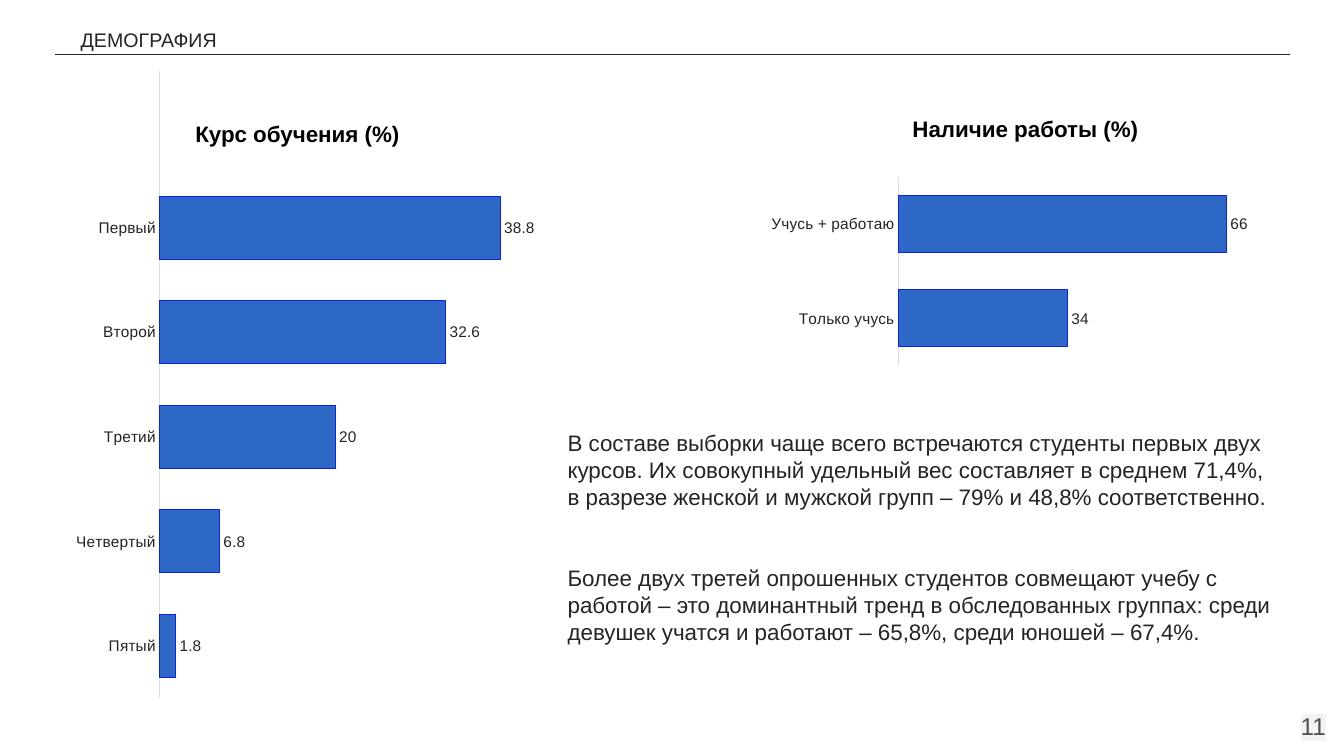
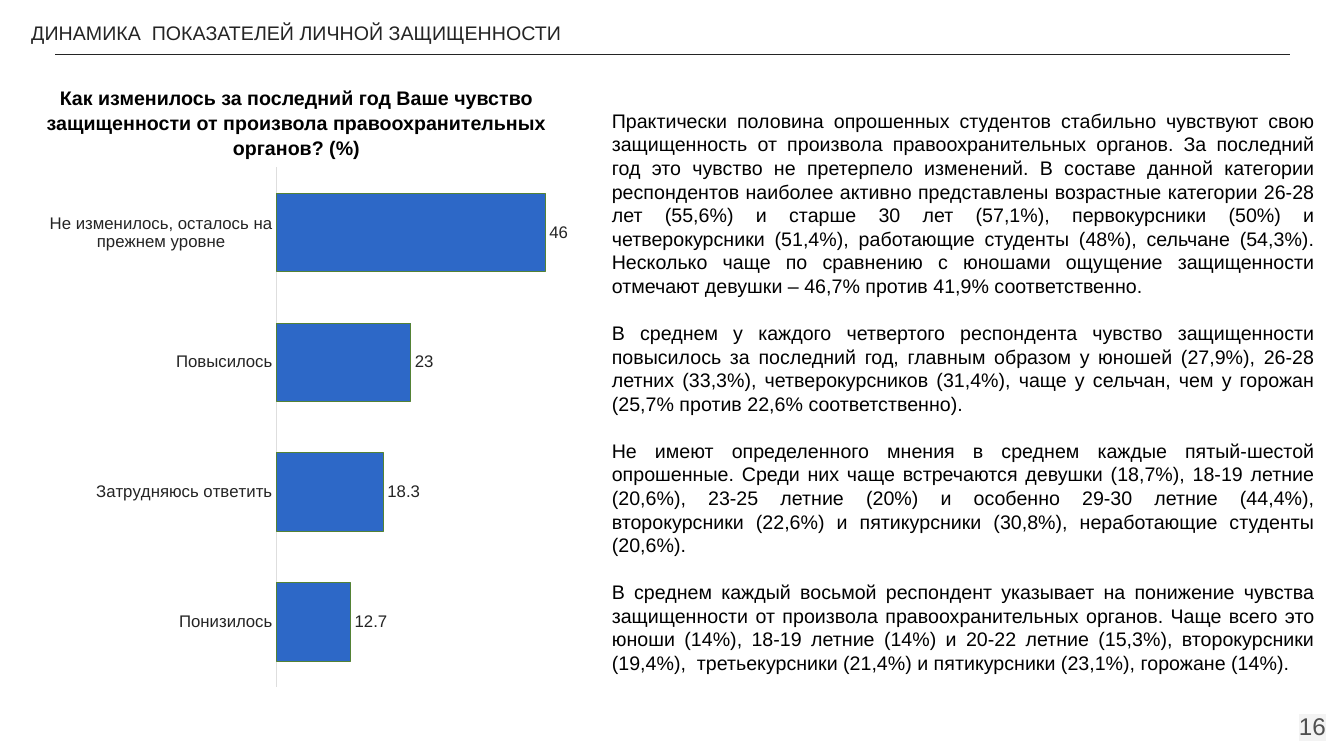
"""Build two survey slides with headings, bar charts and commentary."""
from dataclasses import dataclass
from typing import Any, Optional

from lxml.etree import SubElement
from pptx import Presentation
from pptx.chart.data import CategoryChartData
from pptx.dml.color import RGBColor
from pptx.enum.chart import XL_CHART_TYPE, XL_LABEL_POSITION, XL_TICK_MARK
from pptx.enum.shapes import MSO_CONNECTOR
from pptx.enum.text import MSO_ANCHOR, MSO_AUTO_SIZE, PP_ALIGN
from pptx.oxml import parse_xml
from pptx.oxml.ns import nsdecls, qn
from pptx.util import Inches, Pt

FONT = "Arial"
INK = RGBColor(0x24, 0x24, 0x24)
BLACK = RGBColor(0, 0, 0)
GREY = RGBColor(0x50, 0x50, 0x50)
AXIS = RGBColor(0xDE, 0xDE, 0xDE)
BAR = RGBColor(0x2D, 0x68, 0xC7)
BLUE_EDGE = RGBColor(0x0B, 0x20, 0xEA)
GREEN_EDGE = RGBColor(0x54, 0x82, 0x35)
HIGHLIGHT = "F3F3F3"


@dataclass(frozen=True)
class Area:
    """A rectangle in inches."""

    left: float
    top: float
    width: float
    height: float

    def lengths(self) -> list:
        """Return the four sides as slide lengths."""
        return [Inches(side) for side in (self.left, self.top, self.width, self.height)]


@dataclass(frozen=True)
class Passage:
    """A text box with one format for all its paragraphs."""

    area: Area
    lines: tuple[str, ...]
    size: float
    color: RGBColor = INK
    bold: bool = False
    align: PP_ALIGN = PP_ALIGN.LEFT
    anchor: MSO_ANCHOR = MSO_ANCHOR.TOP
    inset: float = 0.1
    pitch: Optional[float] = None
    gap: float = 0


@dataclass(frozen=True)
class Bars:
    """A horizontal bar chart and its plot area as fractions."""

    area: Area
    rows: tuple[tuple[str, Optional[float]], ...]
    plot: Area
    maximum: float
    size: float
    edge: RGBColor


@dataclass(frozen=True)
class Sheet:
    """The content of one slide."""

    number: str
    heading: Passage
    charts: tuple[Bars, ...]
    passages: tuple[Passage, ...]


def heading(text: str, left: float, top: float) -> Passage:
    """Describe a slide heading."""
    return Passage(Area(left, top, 7, 0.36), (text,), 14, anchor=MSO_ANCHOR.MIDDLE)


def caption(text: str, area: Area, size: float, pitch: Optional[float] = None) -> Passage:
    """Describe a chart caption."""
    return Passage(area, (text,), size, BLACK, True, PP_ALIGN.CENTER, MSO_ANCHOR.MIDDLE, pitch=pitch)


SHEETS = (
    Sheet(
        "11",
        heading("ДЕМОГРАФИЯ", 0.7, 0.21),
        (
            Bars(
                Area(7.08, 1.65, 5.39, 2.67),
                (("Только учусь", 34), ("Учусь + работаю", 66)),
                Area(0.34, 0.04, 0.64, 0.7), 70, 11, BLUE_EDGE,
            ),
            Bars(
                Area(0.35, 0.7, 5.15, 6.23),
                (("Пятый", 1.8), ("Четвертый", 6.8), ("Третий", 20),
                 ("Второй", 32.6), ("Первый", 38.8), (" ", None)),
                Area(0.24, 0, 0.76, 1), 45, 11, BLUE_EDGE,
            ),
        ),
        (
            caption("Курс обучения (%)", Area(1.08, 1.15, 3.74, 0.36), 16),
            caption("Наличие работы (%)", Area(8.3, 1.1, 3.74, 0.36), 16),
            Passage(
                Area(5.5, 4.13, 7.27, 2.67),
                (
                    "В составе выборки чаще всего встречаются студенты первых двух курсов. "
                    "Их совокупный удельный вес составляет в среднем 71,4%, в разрезе "
                    "женской и мужской групп – 79% и 48,8% соответственно.",
                    "Более двух третей опрошенных студентов совмещают учебу с работой – "
                    "это доминантный тренд в обследованных группах: среди девушек учатся "
                    "и работают – 65,8%, среди юношей – 67,4%.",
                ),
                16, inset=0.13, pitch=19.3, gap=38.4,
            ),
        ),
    ),
    Sheet(
        "16",
        heading("ДИНАМИКА  ПОКАЗАТЕЛЕЙ ЛИЧНОЙ ЗАЩИЩЕННОСТИ", 0.21, 0.14),
        (
            Bars(
                Area(0.38, 1.61, 5.37, 5.21),
                (("Понизилось", 12.7), ("Затрудняюсь ответить", 18.3),
                 ("Повысилось", 23), ("Не изменилось, осталось на прежнем уровне", 46)),
                Area(0.44, 0.01, 0.54, 0.99), 50, 12, GREEN_EDGE,
            ),
        ),
        (
            caption(
                "Как изменилось за последний год Ваше чувство защищенности "
                "от произвола правоохранительных органов? (%)",
                Area(0.32, 0.77, 5.24, 0.88), 14, 17.9,
            ),
            Passage(
                Area(5.97, 1.03, 7.17, 5.77),
                (
                    "Практически половина опрошенных студентов стабильно чувствуют свою "
                    "защищенность от произвола правоохранительных органов. За последний год "
                    "это чувство не претерпело изменений. В составе данной категории "
                    "респондентов наиболее активно представлены возрастные категории 26-28 "
                    "лет (55,6%) и старше 30 лет (57,1%), первокурсники (50%) и "
                    "четверокурсники (51,4%), работающие студенты (48%), сельчане (54,3%). "
                    "Несколько чаще по сравнению с юношами ощущение защищенности отмечают "
                    "девушки – 46,7% против 41,9% соответственно.",
                    "В среднем у каждого четвертого респондента чувство защищенности "
                    "повысилось за последний год, главным образом у юношей (27,9%), 26-28 "
                    "летних (33,3%), четверокурсников (31,4%), чаще у сельчан, чем у горожан "
                    "(25,7% против 22,6% соответственно).",
                    "Не имеют определенного мнения в среднем каждые пятый-шестой опрошенные. "
                    "Среди них чаще встречаются девушки (18,7%), 18-19 летние (20,6%), 23-25 "
                    "летние (20%) и особенно 29-30 летние (44,4%), второкурсники (22,6%) и "
                    "пятикурсники (30,8%), неработающие студенты (20,6%).",
                    "В среднем каждый восьмой респондент указывает на понижение чувства "
                    "защищенности от произвола правоохранительных органов. Чаще всего это "
                    "юноши (14%), 18-19 летние (14%) и 20-22 летние (15,3%), второкурсники "
                    "(19,4%),  третьекурсники (21,4%) и пятикурсники (23,1%), горожане (14%).",
                ),
                14, BLACK, align=PP_ALIGN.JUSTIFY, pitch=16.85, gap=16.85,
            ),
        ),
    ),
)


def set_values(target: Any, values: dict[str, Any]) -> None:
    """Set each named attribute of the target."""
    for name, value in values.items():
        setattr(target, name, value)


def set_font(font: Any, size: float, color: RGBColor, bold: bool = False) -> None:
    """Give a font its face, size, weight and colour."""
    set_values(font, {"name": FONT, "size": Pt(size), "bold": bold})
    font.color.rgb = color


def write(box: Any, passage: Passage) -> None:
    """Place a text shape and fill it with the passage."""
    sides = dict(zip(("left", "top", "width", "height"), passage.area.lengths()))
    set_values(box, sides)
    frame = box.text_frame
    set_values(frame, {
        "word_wrap": True, "auto_size": MSO_AUTO_SIZE.NONE, "vertical_anchor": passage.anchor,
        "margin_left": Inches(passage.inset), "margin_right": Inches(passage.inset),
        "margin_top": Inches(passage.inset if passage.inset > 0.1 else 0.05),
        "margin_bottom": Inches(0.05),
    })
    for index, line in enumerate(passage.lines):
        para = frame.add_paragraph() if index else frame.paragraphs[0]
        set_values(para, {
            "alignment": passage.align,
            "space_before": Pt(passage.gap if index else 0),
            "line_spacing": Pt(passage.pitch) if passage.pitch else 1.0,
        })
        span = para.add_run()
        span.text = line
        set_font(span.font, passage.size, passage.color, passage.bold)


def add_passage(page: Any, passage: Passage) -> Any:
    """Add a text box holding the passage."""
    box = page.shapes.add_textbox(*passage.area.lengths())
    write(box, passage)
    return box


def add_rule(page: Any) -> None:
    """Draw the line under the heading."""
    rule = page.shapes.add_connector(
        MSO_CONNECTOR.STRAIGHT, Inches(0.55), Inches(0.54), Inches(12.79), Inches(0.54))
    rule.line.color.rgb = INK
    rule.line.width = Pt(0.75)
    SubElement(rule.element.xpath("p:spPr")[0], qn("a:effectLst"))


def add_number(page: Any, number: str) -> None:
    """Add the highlighted page number."""
    box = add_passage(page, Passage(
        Area(12.48, 6.93, 0.8, 0.57), (number,), 17.3, GREY, align=PP_ALIGN.RIGHT, inset=0.13))
    fill = box.element.xpath(".//a:rPr/a:solidFill")[0]
    fill.addnext(parse_xml(
        f'<a:highlight {nsdecls("a")}><a:srgbClr val="{HIGHLIGHT}"/></a:highlight>'))


def set_plot(chart: Any, plot: Area) -> None:
    """Fix the inner plot area of a chart."""
    plot_area = chart.element.xpath("c:chart/c:plotArea")[0]
    for old in plot_area.xpath("c:layout"):
        plot_area.remove(old)
    layout = parse_xml(f'<c:layout {nsdecls("c")}><c:manualLayout/></c:layout>')
    settings = {
        "layoutTarget": "inner", "xMode": "edge", "yMode": "edge",
        "x": plot.left, "y": plot.top, "w": plot.width, "h": plot.height,
    }
    for tag, value in settings.items():
        SubElement(layout[0], qn(f"c:{tag}")).set("val", str(value))
    plot_area.insert(0, layout)


def add_bars(page: Any, bars: Bars) -> None:
    """Add a bar chart with value labels."""
    data = CategoryChartData()
    data.categories = [name for name, _ in bars.rows]
    data.add_series("Series 1", [value for _, value in bars.rows])
    chart = page.shapes.add_chart(
        XL_CHART_TYPE.BAR_CLUSTERED, *bars.area.lengths(), data).chart
    set_values(chart, {"has_title": False, "has_legend": False})
    set_font(chart.font, bars.size, INK)
    set_plot(chart, bars.plot)
    set_values(chart.value_axis, {
        "visible": False, "has_major_gridlines": False,
        "minimum_scale": 0, "maximum_scale": bars.maximum,
    })
    axis = chart.category_axis
    set_values(axis, {
        "major_tick_mark": XL_TICK_MARK.NONE, "minor_tick_mark": XL_TICK_MARK.NONE,
        "has_major_gridlines": False,
    })
    set_font(axis.tick_labels.font, bars.size, INK)
    plot = chart.plots[0]
    set_values(plot, {"gap_width": 66, "vary_by_categories": False, "has_data_labels": True})
    set_values(plot.data_labels, {"show_value": True, "position": XL_LABEL_POSITION.OUTSIDE_END})
    set_font(plot.data_labels.font, bars.size, INK)
    series = plot.series[0]
    series.format.fill.solid()
    series.format.fill.fore_color.rgb = BAR
    for line, color in ((axis.format.line, AXIS), (series.format.line, bars.edge)):
        line.color.rgb = color
        line.width = Pt(0.75)


def add_sheet(deck: Any, sheet: Sheet) -> None:
    """Add one slide with everything on it."""
    page = deck.slides.add_slide(deck.slide_layouts[5])
    write(page.shapes.title, sheet.heading)
    add_rule(page)
    add_number(page, sheet.number)
    for bars in sheet.charts:
        add_bars(page, bars)
    for passage in sheet.passages:
        add_passage(page, passage)


def main() -> None:
    """Build and save the deck."""
    deck = Presentation()
    set_values(deck, {"slide_width": Inches(13.33), "slide_height": Inches(7.5)})
    for sheet in SHEETS:
        add_sheet(deck, sheet)
    deck.save("out.pptx")


if __name__ == "__main__":
    main()
